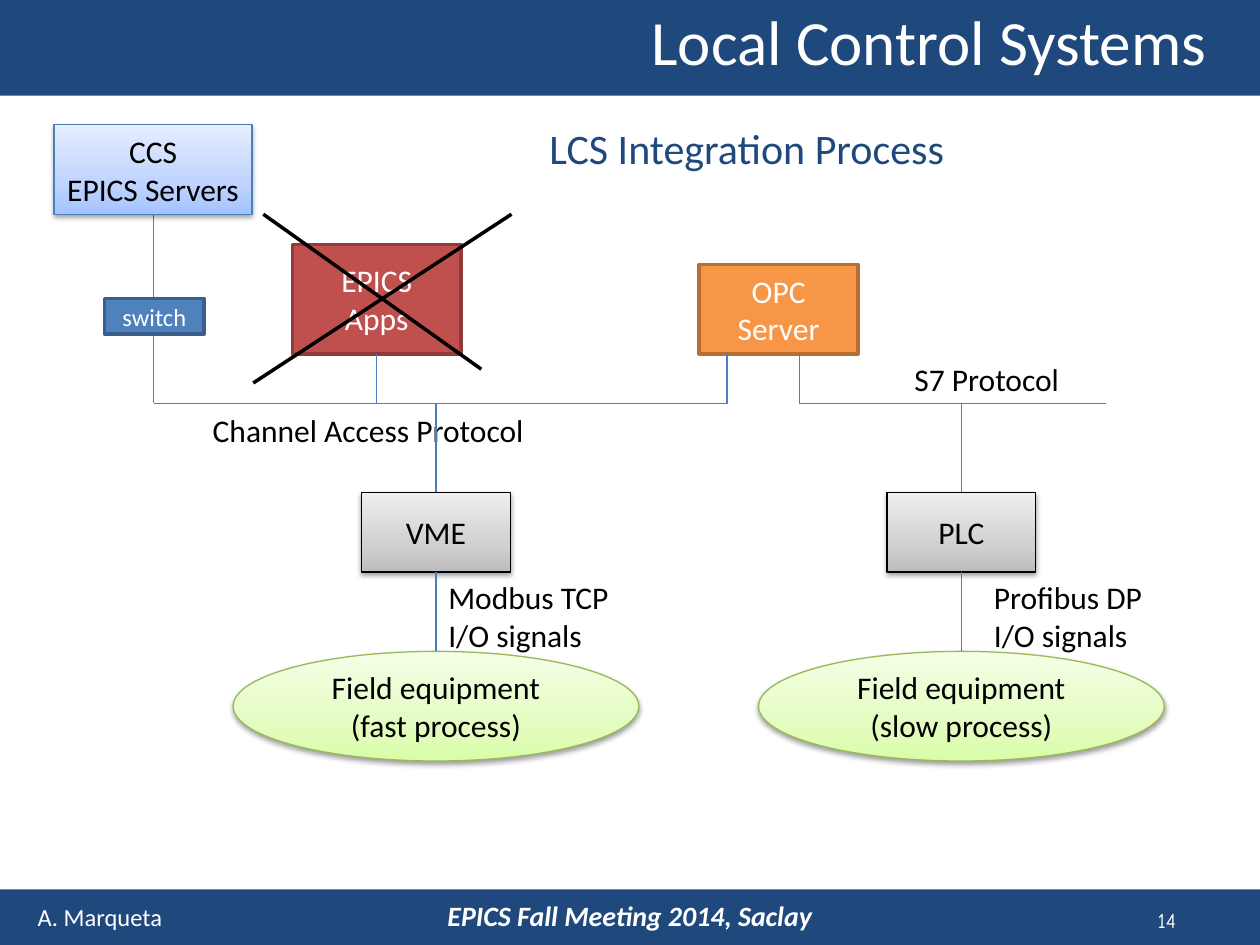
from collections import namedtuple

from lxml import etree
from pptx import Presentation
from pptx.dml.color import RGBColor
from pptx.enum import shapes, text
from pptx.oxml import ns
from pptx.util import Inches, Pt

COLUMNS, ROWS = 100, 75
CELL = Inches(0.1)
COLORS = {
    "navy": "1F497D", "white": "FFFFFF", "black": "000000", "wire": "4B7EBC",
    "red": "C0504D", "red edge": "8E3B39", "orange": "F79646", "orange edge": "B76F34",
    "blue": "4F81BD", "blue edge": "3A5F8C", "green edge": "98B955",
}
GRADIENTS = {
    "gray": ("BDBDBD", "D1D1D1", "EEEEEE"),
    "lime": ("DAFDA7", "E4FCC2", "F5FFE7"),
    "sky": ("A4C4FF", "BFD4FF", "E6EEFF"),
}
STOPS = (0, 35000, 100000)


class Box(namedtuple("Box", "left top width height")):
    """An area of the slide, measured in grid cells."""

    def inside(self, left, top, width, height):
        """Return a box placed relative to this one."""
        return Box(self.left + left, self.top + top, width, height)

    def lengths(self):
        """Return left, top, width and height in slide units."""
        return [round(value * CELL) for value in self]


def rgb(name):
    """Return the named color."""
    return RGBColor.from_string(COLORS[name])


def add_xml(parent, tag, **attributes):
    """Append a drawing element and return it."""
    return etree.SubElement(parent, ns.qn(tag), attributes)


def write(frame, lines, size, color, align=text.PP_ALIGN.LEFT, font="Calibri"):
    """Fill a text frame with one paragraph for each line."""
    frame.text = lines
    for para in frame.paragraphs:
        para.alignment = align
        para.font.size = Pt(size)
        para.font.name = font
        para.font.color.rgb = rgb(color)


def add_label(page, box, lines, size=18, color="black", wrap=False, **style):
    """Add a text box and return its frame."""
    frame = page.shapes.add_textbox(*box.lengths()).text_frame
    frame.word_wrap = wrap
    write(frame, lines, size, color, **style)
    return frame


def fill_placeholder(holder, box, lines, size, color):
    """Move a placeholder to its box and fill it."""
    holder.left, holder.top, holder.width, holder.height = box.lengths()
    frame = holder.text_frame
    frame.auto_size = text.MSO_AUTO_SIZE.NONE
    frame.vertical_anchor = text.MSO_ANCHOR.TOP
    write(frame, lines, size, color)
    return frame


def add_block(page, box, fill, edge=None, lines="", size=18, color="white",
              weight=2, kind=shapes.MSO_SHAPE.RECTANGLE):
    """Add a flat shape with centered text."""
    block = page.shapes.add_shape(kind, *box.lengths())
    block.shadow.inherit = False
    block.fill.solid()
    block.fill.fore_color.rgb = rgb(fill)
    if edge:
        block.line.color.rgb = rgb(edge)
        block.line.width = Pt(weight)
    else:
        block.line.fill.background()
    if lines:
        block.text_frame.vertical_anchor = text.MSO_ANCHOR.MIDDLE
        write(block.text_frame, lines, size, color, text.PP_ALIGN.CENTER)
    return block


def add_raised_block(page, box, gradient, edge, lines, kind=shapes.MSO_SHAPE.RECTANGLE):
    """Add a shape with a vertical gradient and a soft shadow."""
    block = add_block(page, box, "white", edge, lines, color="black", weight=0.75, kind=kind)
    block.fill.gradient()
    block.fill.gradient_angle = 90
    properties = block.element.spPr
    stops = properties.find(".//" + ns.qn("a:gsLst"))
    stops.clear()
    for position, value in zip(STOPS, GRADIENTS[gradient]):
        add_xml(add_xml(stops, "a:gs", pos=str(position)), "a:srgbClr", val=value)
    shadow = add_xml(properties.find(ns.qn("a:effectLst")), "a:outerShdw",
                     blurRad=str(Pt(3.1)), dist=str(Pt(1.6)), dir="5400000", rotWithShape="0")
    add_xml(add_xml(shadow, "a:srgbClr", val=COLORS["black"]), "a:alpha", val="38000")


def add_wire(page, box, start, end, color="wire", weight=0.75, bent=False):
    """Connect two points of a box, turning down first when bent."""
    kind = shapes.MSO_CONNECTOR.ELBOW if bent else shapes.MSO_CONNECTOR.STRAIGHT
    points = [box.inside(*point, 0, 0).lengths()[:2] for point in (start, end)]
    wire = page.shapes.add_connector(kind, *points[0], *points[1])
    wire.line.color.rgb = rgb(color)
    wire.line.width = Pt(weight)
    properties = wire.element.spPr
    add_xml(properties, "a:effectLst")
    if bent:
        guides = properties.find(".//" + ns.qn("a:avLst"))
        add_xml(guides, "a:gd", name="adj1", fmla="val 200")


def draw_header(page, box):
    """Draw the title band."""
    add_block(page, box, "navy")
    page.shapes._spTree.append(page.shapes.title.element)
    frame = fill_placeholder(page.shapes.title, box.inside(50.7, -0.3, 46.5, 7.1),
                             "Local Control Systems", 36, "white")
    frame.word_wrap = False


def draw_footer(page, box):
    """Draw the band with author, meeting and page number."""
    add_block(page, box, "navy")
    add_label(page, box.inside(2, 0.5, 12, 3.4), "A. Marqueta", 14, "white")
    add_label(page, box.inside(90.9, 0.9, 4.7, 3), "14", 12, "white", font="Comic Neue")
    meeting = add_label(page, box.inside(24, 0.2, 52, 3.7), "EPICS Fall Meeting 2014, Saclay",
                        16, "white", wrap=True, align=text.PP_ALIGN.CENTER)
    meeting.paragraphs[0].font.bold = True
    meeting.paragraphs[0].font.italic = True


def draw_subtitle(page, box):
    """Place the subtitle in the body placeholder without a bullet."""
    frame = fill_placeholder(page.placeholders[1], box, "LCS Integration Process", 24, "navy")
    para = frame.paragraphs[0]
    para.space_before = Pt(0)
    properties = para._p.get_or_add_pPr()
    properties.set("marL", "0")
    properties.set("indent", "0")
    bullet = etree.Element(ns.qn("a:buNone"))
    properties.find(ns.qn("a:spcBef")).addnext(bullet)


def draw_network(page, box):
    """Draw the servers and the two protocol buses."""
    add_block(page, box.inside(18.9, 9.5, 13.4, 8.7), "red", "red edge", "EPICS\nApps")
    add_block(page, box.inside(51.2, 11.1, 12.6, 7.1), "orange", "orange edge", "OPC\nServer")
    add_wire(page, box, (53.5, 18.2), (7.9, 22.1), bent=True)
    add_wire(page, box, (59.1, 18.2), (83.5, 22.1), bent=True)
    for column, top, bottom in ((25.6, 18.2, 22.1), (7.9, 16.6, 22.1), (7.9, 7.1, 13.8)):
        add_wire(page, box, (column, top), (column, bottom))
    add_label(page, box.inside(67.3, 18.2, 13.6, 4), "S7 Protocol")
    add_label(page, box.inside(11.6, 22.2, 27, 4), "Channel Access Protocol")
    add_block(page, box.inside(4, 13.8, 7.9, 2.8), "blue", "blue edge", "switch", size=14)
    add_raised_block(page, box.inside(0, 0, 15.7, 7.1), "sky", "wire", "CCS\nEPICS Servers")
    for start, end in (((36.3, 7.1), (15.8, 20.5)), ((33.9, 19.4), (16.6, 7.1))):
        add_wire(page, box, start, end, "black", 2)


def draw_chain(page, box, controller, signals, process, indent):
    """Draw a controller wired from its bus down to field equipment."""
    middle = box.width / 2
    add_wire(page, box, (middle, 0), (middle, 7.1))
    add_raised_block(page, box.inside(10.2, 7.1, 11.8, 6.3), "gray", "black", controller)
    add_raised_block(page, box.inside(0, 19.7, box.width, 8.7), "lime", "green edge",
                     f"Field equipment\n({process})", shapes.MSO_SHAPE.OVAL)
    add_wire(page, box, (middle, 13.4), (middle, 19.7))
    add_label(page, box.inside(middle + indent, 13.4, 15, 7.1), f"{signals}\nI/O signals")


def main():
    """Build and save the deck."""
    deck = Presentation()
    deck.slide_width, deck.slide_height = COLUMNS * CELL, ROWS * CELL
    page = deck.slides.add_slide(deck.slide_layouts[1])
    draw_header(page, Box(0, 0, COLUMNS, 7.6))
    draw_footer(page, Box(0, 70.6, COLUMNS, 4.4))
    draw_subtitle(page, Box(42.6, 9.2, 56.2, 5.5))
    draw_network(page, Box(4.3, 9.9, 83.5, 22.1))
    draw_chain(page, Box(18.5, 32, 32.2, 28.4), "VME", "Modbus TCP", "fast process", 0)
    draw_chain(page, Box(60.2, 32, 32.2, 28.4), "PLC", "Profibus DP", "slow process", 1.6)
    deck.save("out.pptx")


if __name__ == "__main__":
    main()
